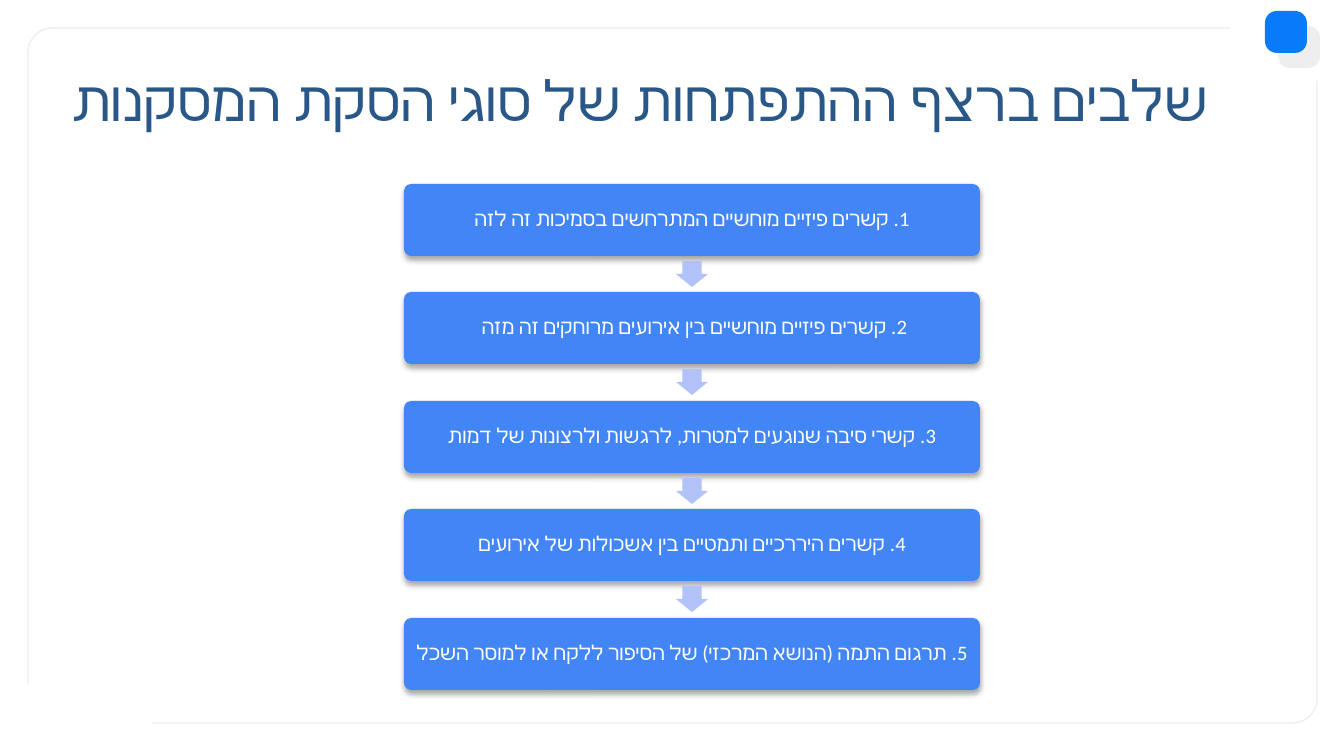
from lxml.etree import SubElement
from pptx import Presentation
from pptx.dml.color import RGBColor
from pptx.enum.shapes import MSO_SHAPE
from pptx.enum.text import MSO_ANCHOR, MSO_AUTO_SIZE, PP_ALIGN
from pptx.oxml.ns import qn
from pptx.util import Pt

PX_PER_INCH = 134.4
FONT = "Calibri"
COLORS = {
    "white": "FFFFFF",
    "frame": "EEEEEE",
    "accent": "087BF8",
    "title": "285788",
    "stage": "4285F4",
    "arrow": "B0C2F8",
}
TITLE = " שלבים ברצף ההתפתחות של סוגי הסקת המסקנות"
STAGES = [
    "1. קשרים פיזיים מוחשיים המתרחשים בסמיכות זה לזה",
    "2. קשרים פיזיים מוחשיים בין אירועים מרוחקים זה מזה ",
    "3. קשרי סיבה שנוגעים למטרות, לרגשות ולרצונות של דמות",
    "4. קשרים היררכיים ותמטיים בין אשכולות של אירועים",
    "5. תרגום התמה (הנושא המרכזי) של הסיפור ללקח או למוסר השכל",
]

# Stage column: first and last box tops set the equal pitch
STAGE_LEFT, STAGE_WIDTH, STAGE_HEIGHT = 404, 576, 72
FIRST_TOP, LAST_TOP = 184, 618
ARROW_LENGTH, ARROW_WIDTH = 26, 32


def px(length):
    return round(length * 914400 / PX_PER_INCH)


def color(name):
    return RGBColor.from_string(COLORS[name])


def add_block(shapes, kind, left, top, width, height, fill=None, line=None, adjustments=()):
    block = shapes.add_shape(kind, px(left), px(top), px(width), px(height))
    block.shadow.inherit = False
    for index, value in enumerate(adjustments):
        block.adjustments[index] = value
    if fill:
        block.fill.solid()
        block.fill.fore_color.rgb = color(fill)
    else:
        block.fill.background()
    if line:
        block.line.color.rgb = color(line)
        block.line.width = Pt(0.75)
    else:
        block.line.fill.background()
    return block


def add_shadow(block):
    effects = block._element.spPr.find(qn("a:effectLst"))
    shadow = SubElement(effects, qn("a:outerShdw"), blurRad=str(Pt(3.1)),
                        dist=str(Pt(1.8)), dir="5400000", rotWithShape="0")
    shade = SubElement(shadow, qn("a:srgbClr"), val="000000")
    SubElement(shade, qn("a:alpha"), val="35000")


def write_hebrew(box, text, size, text_color, align, anchor, inset):
    frame = box.text_frame
    frame.word_wrap = True
    frame.auto_size = MSO_AUTO_SIZE.NONE
    frame.vertical_anchor = anchor
    frame.margin_left = frame.margin_right = px(inset)
    frame.margin_top = frame.margin_bottom = px(inset)
    para = frame.paragraphs[0]
    para.alignment = align
    para._p.get_or_add_pPr().set("rtl", "1")
    span = para.add_run()
    span.text = text
    span.font.size = Pt(size)
    span.font.name = FONT
    span.font.color.rgb = color(text_color)
    SubElement(span._r.get_or_add_rPr(), qn("a:cs"), typeface=FONT)
    return para


def add_decoration(page):
    rounded, rectangle = MSO_SHAPE.ROUNDED_RECTANGLE, MSO_SHAPE.RECTANGLE
    # Frame, opened at two corners by white blocks
    add_block(page.shapes, rounded, 28, 28, 1289, 695, line="frame", adjustments=[0.035])
    add_block(page.shapes, rectangle, 1231, 4, 108, 77, "white")
    add_block(page.shapes, rectangle, 8, 684, 144, 72, "white")
    # Overlapping corner squares
    add_block(page.shapes, rounded, 1278, 26, 42, 42, "frame", adjustments=[0.284])
    add_block(page.shapes, rounded, 1265, 11, 42, 42, "accent", adjustments=[0.284])


def add_title(page):
    title = page.shapes.title
    title.left, title.top = px(27), px(52)
    title.width, title.height = px(1208), px(102)
    write_hebrew(title, TITLE, 30, "title", PP_ALIGN.RIGHT, MSO_ANCHOR.TOP, 13)


def add_stage(shapes, text, top):
    box = add_block(shapes, MSO_SHAPE.ROUNDED_RECTANGLE, STAGE_LEFT, top,
                    STAGE_WIDTH, STAGE_HEIGHT, "stage", adjustments=[0.1])
    add_shadow(box)
    para = write_hebrew(box, text, 11, "white", PP_ALIGN.CENTER, MSO_ANCHOR.MIDDLE, 7)
    para.line_spacing = 0.9
    para.space_after = Pt(4)


def add_down_arrow(shapes, center_x, center_y):
    arrow = add_block(shapes, MSO_SHAPE.RIGHT_ARROW,
                      center_x - ARROW_LENGTH // 2, center_y - ARROW_WIDTH // 2,
                      ARROW_LENGTH, ARROW_WIDTH, "arrow", adjustments=[0.6, 0.5])
    arrow.rotation = 90


def add_stages(page):
    group = page.shapes.add_group_shape()
    last = len(STAGES) - 1
    tops = [FIRST_TOP + (LAST_TOP - FIRST_TOP) * index // last for index in range(last + 1)]
    for index, (text, top) in enumerate(zip(STAGES, tops)):
        add_stage(group.shapes, text, top)
        if index < last:
            middle = (top + STAGE_HEIGHT + tops[index + 1]) // 2
            add_down_arrow(group.shapes, STAGE_LEFT + STAGE_WIDTH // 2, middle)


def main():
    deck = Presentation()
    deck.slide_width, deck.slide_height = px(1344), px(756)
    page = deck.slides.add_slide(deck.slide_layouts[5])
    add_decoration(page)
    add_title(page)
    add_stages(page)
    deck.save("out.pptx")


if __name__ == "__main__":
    main()
